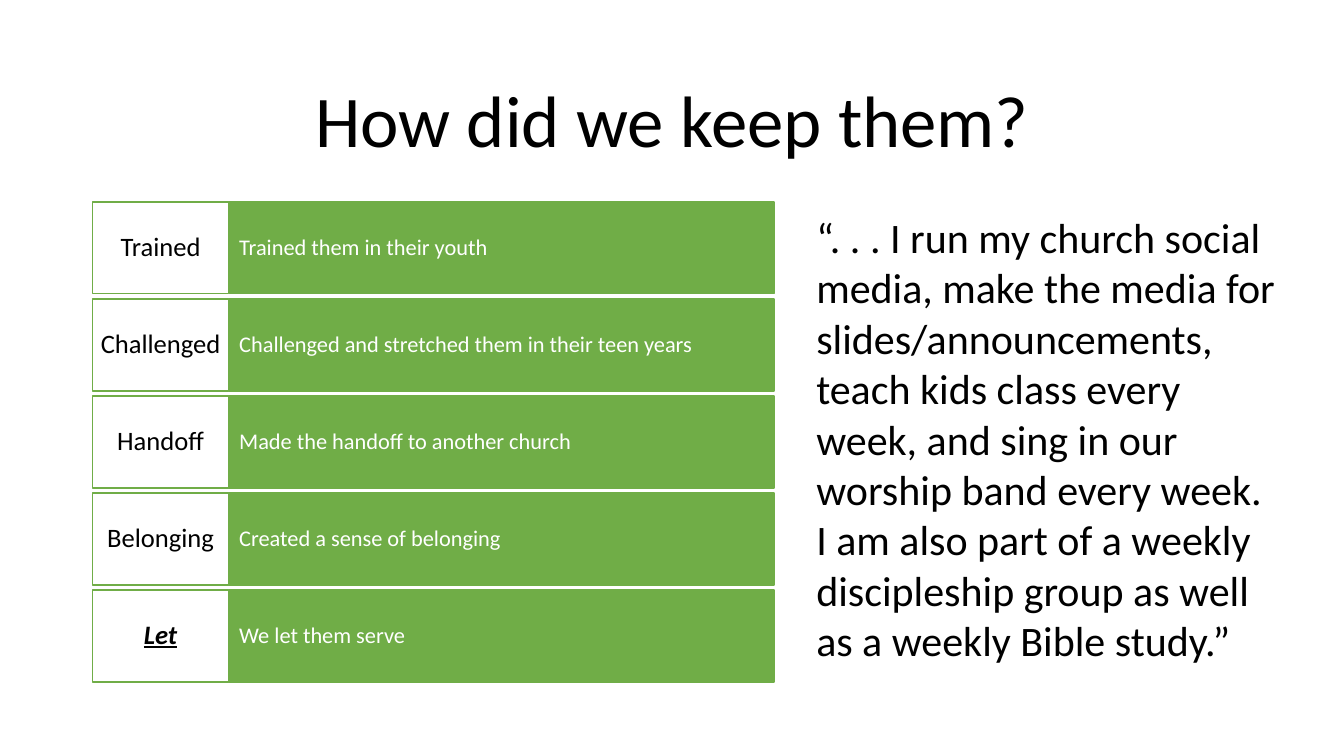
from dataclasses import dataclass

from pptx import Presentation
from pptx.dml.color import RGBColor
from pptx.enum.shapes import MSO_SHAPE
from pptx.enum.text import MSO_ANCHOR, MSO_AUTO_SIZE, PP_ALIGN
from pptx.util import Pt

RECT = MSO_SHAPE.RECTANGLE
TOP, MIDDLE = MSO_ANCHOR.TOP, MSO_ANCHOR.MIDDLE
LEFT, CENTER = PP_ALIGN.LEFT, PP_ALIGN.CENTER
NO_FIT = MSO_AUTO_SIZE.NONE
TITLE_ONLY = 5


@dataclass(frozen=True)
class Theme:
    font: str = "Calibri"
    black: RGBColor = RGBColor(0x00, 0x00, 0x00)
    white: RGBColor = RGBColor(0xFF, 0xFF, 0xFF)
    green: RGBColor = RGBColor(0x70, 0xAD, 0x47)
    title: float = 52
    quote: float = 30
    label: float = 19
    detail: float = 16


class SlideBuilder:
    def __init__(self, slide, theme):
        self.s = slide
        self.theme = theme

    def set_text(self, sp, text, size, color, align=LEFT, anchor=MIDDLE,
                 spacing=0.9, margins=(7.2, 3.6), emphasis=False):
        tf = sp.text_frame
        tf.word_wrap = True
        tf.auto_size = NO_FIT
        tf.vertical_anchor = anchor
        tf.margin_left = tf.margin_right = Pt(margins[0])
        tf.margin_top = tf.margin_bottom = Pt(margins[1])
        p = tf.paragraphs[0]
        p.alignment = align
        p.line_spacing = spacing
        r = p.add_run()
        r.text = text
        r.font.name = self.theme.font
        r.font.size = Pt(size)
        r.font.color.rgb = color
        if emphasis:
            r.font.bold = r.font.italic = r.font.underline = True

    def title(self, text, x, y, w, h):
        sp = self.s.shapes.title
        sp.left, sp.top, sp.width, sp.height = Pt(x), Pt(y), Pt(w), Pt(h)
        self.set_text(sp, text, self.theme.title, self.theme.black, CENTER)

    def box(self, x, y, w, h, fill, text, size, color, **style):
        sp = self.s.shapes.add_shape(RECT, Pt(x), Pt(y), Pt(w), Pt(h))
        sp.shadow.inherit = False
        sp.fill.solid()
        sp.fill.fore_color.rgb = fill
        sp.line.color.rgb = self.theme.green
        sp.line.width = Pt(1)
        self.set_text(sp, text, size, color, **style)

    def quote(self, text, x, y, w, h):
        sp = self.s.shapes.add_textbox(Pt(x), Pt(y), Pt(w), Pt(h))
        self.set_text(sp, text, self.theme.quote, self.theme.black,
                      anchor=TOP, spacing=1.0)


ROWS = [
    ("Trained", "Trained them in their youth"),
    ("Challenged", "Challenged and stretched them in their teen years"),
    ("Handoff", "Made the handoff to another church"),
    ("Belonging", "Created a sense of belonging"),
    ("Let", "We let them serve"),
]
QUOTE = ("“. . . I run my church social media, make the media for "
         "slides/announcements, teach kids class every week, and sing in our "
         "worship band every week. I am also part of a weekly discipleship "
         "group as well as a weekly Bible study.”")


def main():
    prs = Presentation()
    prs.slide_width, prs.slide_height = Pt(960), Pt(540)
    theme = Theme()
    slide = prs.slides.add_slide(prs.slide_layouts[TITLE_ONLY])
    builder = SlideBuilder(slide, theme)

    # Title
    builder.title("How did we keep them?", 66, 44, 828, 89)

    # Rows of label and detail
    left, top, pitch, height = 66, 144.2, 69.3, 65.7
    label_w, detail_w = 97.4, 389.6
    for i, (label, detail) in enumerate(ROWS):
        y = top + i * pitch
        builder.box(left + label_w, y, detail_w, height, theme.green,
                    detail, theme.detail, theme.white, margins=(7.5, 16.7))
        builder.box(left, y, label_w, height, theme.white,
                    label, theme.label, theme.black, align=CENTER,
                    margins=(5.2, 6.5), emphasis=label == "Let")

    # Quote
    builder.quote(QUOTE, 576, 147.6, 343, 334)

    prs.save("out.pptx")


if __name__ == "__main__":
    main()
